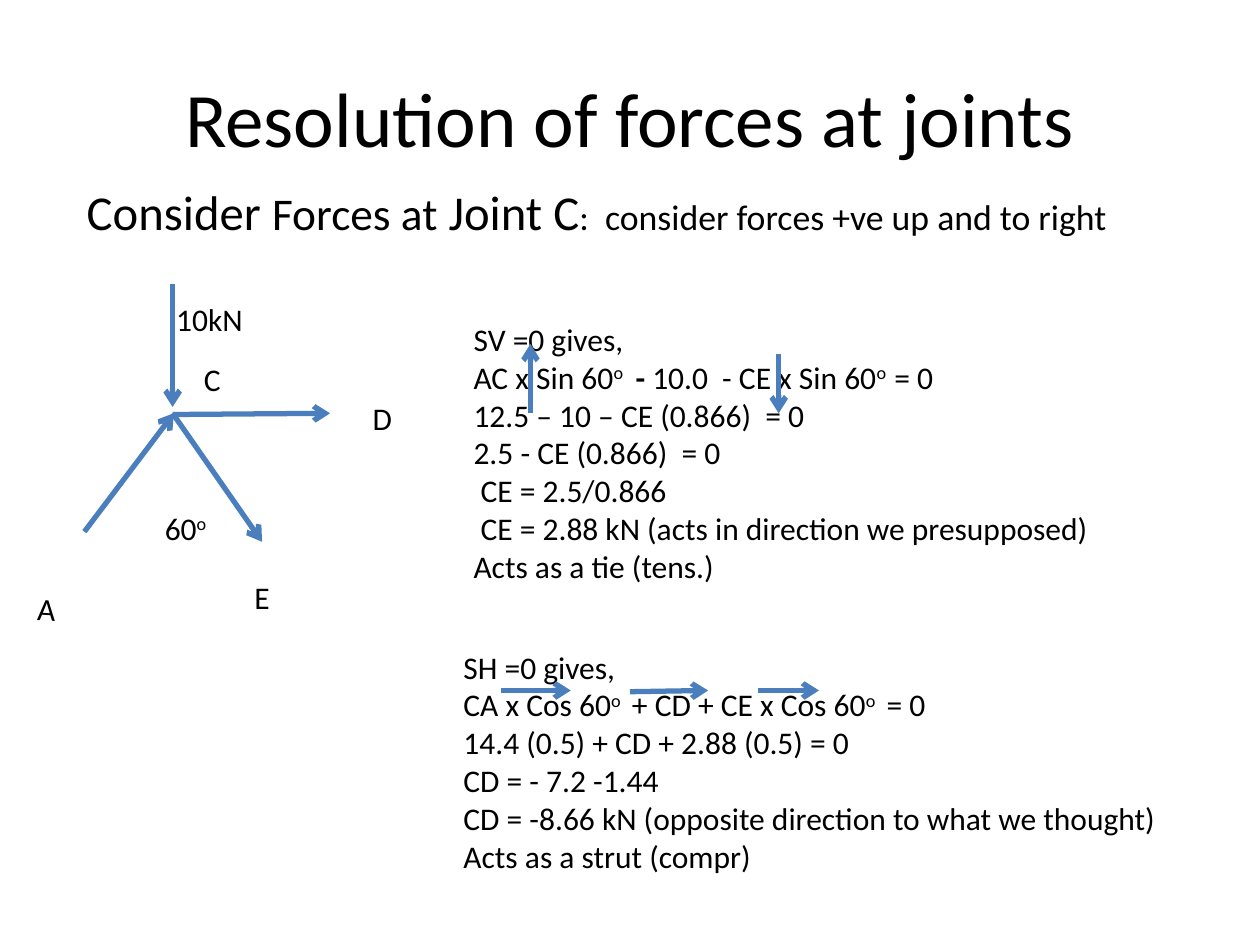
from typing import NamedTuple

from lxml.etree import SubElement
from pptx import Presentation
from pptx.dml.color import RGBColor as RGB
from pptx.enum.shapes import MSO_CONNECTOR as Conn
from pptx.enum.text import MSO_ANCHOR as Anchor, MSO_AUTO_SIZE as Fit, PP_ALIGN as Align
from pptx.oxml.ns import qn
from pptx.util import Inches, Pt

COLORS = {"text": "000000", "force": "4B7EBC"}
FONT = "Calibri"


class Run(NamedTuple):
    text: str
    size: float = 18
    up: bool = False
    bold: bool = False


class Label(NamedTuple):
    left: float
    top: float
    width: float
    lines: list[list[Run]]
    height: float = 0.4
    turn: float = 0


class Arrow(NamedTuple):
    x1: float
    y1: float
    x2: float
    y2: float


def line(text: str) -> list[Run]:
    return [Run(text)]


def sup(text: str) -> Run:
    return Run(text, up=True)


def add_label(slide, label: Label):
    box = slide.shapes.add_textbox(
        Inches(label.left), Inches(label.top), Inches(label.width), Inches(label.height))
    box.rotation = label.turn
    frame = box.text_frame
    frame.word_wrap = True
    frame.auto_size = Fit.SHAPE_TO_FIT_TEXT
    for i, runs in enumerate(label.lines):
        para = frame.add_paragraph() if i else frame.paragraphs[0]
        for item in runs:
            run = para.add_run()
            run.text = item.text
            font = run.font
            font.name, font.size, font.bold = FONT, Pt(item.size), item.bold
            font.color.rgb = RGB.from_string(COLORS["text"])
            if item.up:
                run._r.get_or_add_rPr().set("baseline", "30000")
    return box


def add_arrow(slide, arrow: Arrow) -> None:
    link = slide.shapes.add_connector(Conn.STRAIGHT, *(Inches(v) for v in arrow))
    link.line.color.rgb = RGB.from_string(COLORS["force"])
    link.line.width = Pt(3)
    SubElement(link.line._get_or_add_ln(), qn("a:tailEnd"), type="arrow")
    SubElement(link._element.spPr, qn("a:effectLst"))


# Headings
TITLE = Label(0.5, 0.3, 9, [[Run("Resolution of forces at joints", 44)]], 1.25)
LEAD = Label(0.59, 1.39, 8.9, [[
    Run("Consider ", 27.8), Run("Forces at", 25.9), Run(" Joint C", 27.8),
    Run(":  consider forces +ve up and to right", 20.4)]], 0.58)

# Forces meeting at joint C
FORCES = [
    Arrow(1.37, 3.28, 2.08, 4.3),
    Arrow(1.37, 2.25, 1.37, 3.23),
    Arrow(0.67, 4.22, 1.38, 3.28),
    Arrow(1.37, 3.29, 2.62, 3.28),
]
NAMES = [
    Label(1.3, 2.33, 0.94, [line("10kN")]),
    Label(1.21, 3.99, 1.57, [[Run("60"), sup("o")]]),
    Label(1.52, 2.81, 0.47, [line("C")]),
    Label(1.92, 4.54, 0.47, [line("E")]),
    Label(0.2, 4.63, 0.47, [line("A")], turn=3.1),
    Label(2.86, 3.12, 0.47, [line("D")]),
]

# Vertical sum
VERT = Label(3.66, 2.49, 5.98, [
    line("SV =0 gives,"),
    [Run("AC x Sin 60"), sup("o   "), Run("-", bold=True),
     Run(" 10.0  - CE x Sin 60"), sup("o  "), Run("= 0")],
    line("12.5 – 10 – CE (0.866)  = 0"),
    line("2.5 - CE (0.866)  = 0"),
    line(" CE = 2.5/0.866"),
    line(" CE = 2.88 kN (acts in direction we presupposed)"),
    line("Acts as a tie (tens.)"),
], 2.22)
UPDOWN = [Arrow(6.18, 2.81, 6.18, 3.28), Arrow(4.21, 3.28, 4.21, 2.73)]

# Horizontal sum
HORIZ = Label(3.58, 5.09, 6.22, [
    line("SH =0 gives,"),
    [Run("CA x Cos 60"), sup("o "), Run(" + CD + CE x Cos 60"),
     sup("o "), Run(" = 0")],
    line("14.4 (0.5) + CD + 2.88 (0.5) = 0"),
    line("CD = - 7.2 -1.44"),
    line("CD = -8.66 kN (opposite direction to what we thought)"),
    line("Acts as a strut (compr)"),
], 1.92)
ACROSS = [
    Arrow(3.98, 5.48, 4.53, 5.48),
    Arrow(5, 5.49, 5.62, 5.48),
    Arrow(6.02, 5.48, 6.5, 5.48),
]


def main() -> None:
    deck = Presentation()
    deck.slide_width, deck.slide_height = Inches(10), Inches(7.5)
    slide = deck.slides.add_slide(deck.slide_layouts[6])

    title = add_label(slide, TITLE).text_frame
    title.auto_size = Fit.NONE
    title.vertical_anchor = Anchor.MIDDLE
    title.paragraphs[0].alignment = Align.CENTER
    add_label(slide, LEAD).text_frame.auto_size = Fit.NONE

    parts = [(FORCES, NAMES), ([], [VERT]), (UPDOWN, [HORIZ]), (ACROSS, [])]
    for arrows, labels in parts:
        for arrow in arrows:
            add_arrow(slide, arrow)
        for label in labels:
            add_label(slide, label)
    deck.save("out.pptx")


if __name__ == "__main__":
    main()
